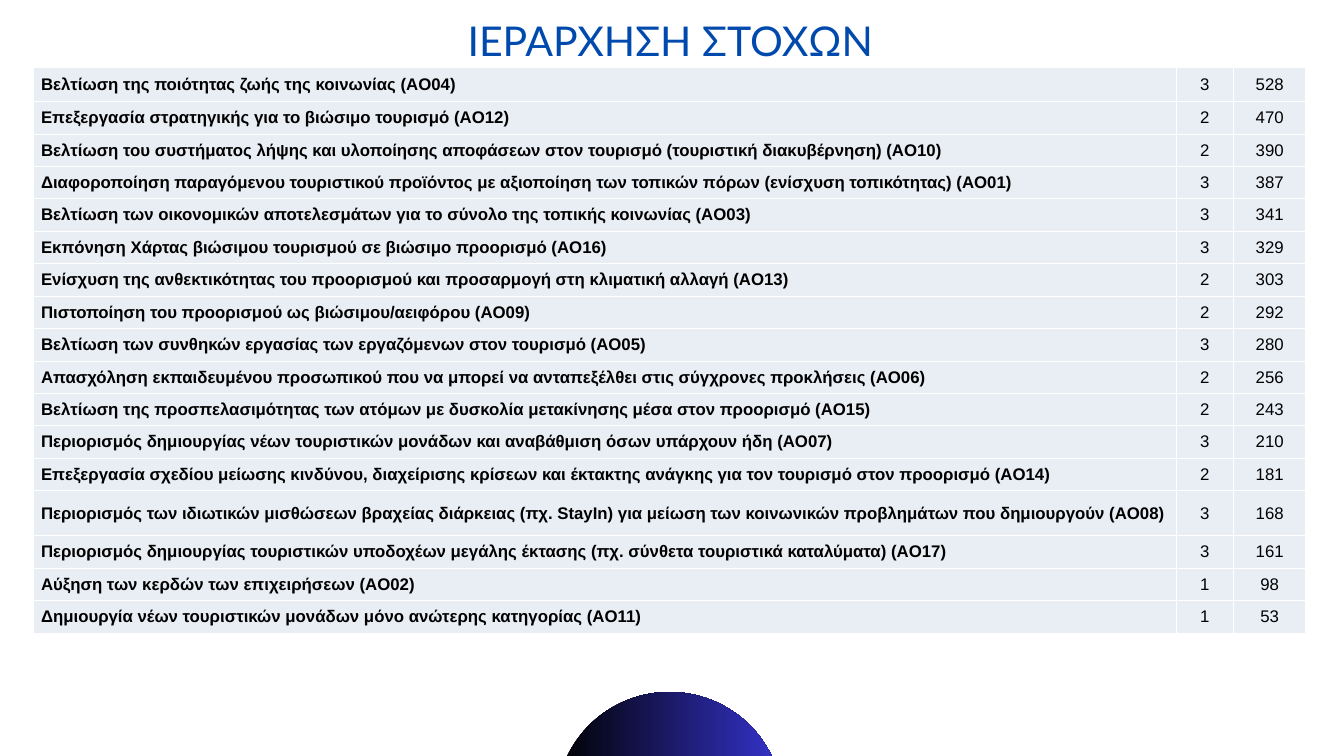
import dataclasses

import pptx
import pptx.dml.color
import pptx.enum.shapes
import pptx.enum.text
import pptx.oxml
import pptx.oxml.ns
import pptx.util
from pptx.util import Cm, Pt

RGB = pptx.dml.color.RGBColor.from_string
ALIGN = pptx.enum.text.PP_ALIGN


@dataclasses.dataclass(frozen=True)
class Theme:
    title_color: str = "004AAD"
    text_color: str = "000000"
    row_color: str = "E9EDF4"
    border_color: str = "FFFFFF"
    circle_colors: tuple = ("000000", "3533CD")
    title_font: str = "Lato"
    table_font: str = "Arial"
    title_size: int = 44
    table_size: int = 18
    border_width: int = 1


THEME = Theme()

GOALS = [
    ("Βελτίωση της ποιότητας ζωής της κοινωνίας (AO04)", 3, 528),
    ("Επεξεργασία στρατηγικής για το βιώσιμο τουρισμό (AO12)", 2, 470),
    ("Βελτίωση του συστήματος λήψης και υλοποίησης αποφάσεων στον τουρισμό (τουριστική διακυβέρνηση) (AO10)", 2, 390),
    ("Διαφοροποίηση παραγόμενου τουριστικού προϊόντος με αξιοποίηση των τοπικών πόρων (ενίσχυση τοπικότητας) (AO01)", 3, 387),
    ("Βελτίωση των οικονομικών αποτελεσμάτων για το σύνολο της τοπικής κοινωνίας (AO03)", 3, 341),
    ("Εκπόνηση Χάρτας βιώσιμου τουρισμού σε βιώσιμο προορισμό (AO16)", 3, 329),
    ("Ενίσχυση της ανθεκτικότητας του προορισμού και προσαρμογή στη κλιματική αλλαγή (AO13)", 2, 303),
    ("Πιστοποίηση του προορισμού ως βιώσιμου/αειφόρου (AO09)", 2, 292),
    ("Βελτίωση των συνθηκών εργασίας των εργαζόμενων στον τουρισμό (AO05)", 3, 280),
    ("Απασχόληση εκπαιδευμένου προσωπικού που να μπορεί να ανταπεξέλθει στις σύγχρονες προκλήσεις (AO06)", 2, 256),
    ("Βελτίωση της προσπελασιμότητας των ατόμων με δυσκολία μετακίνησης μέσα στον προορισμό (AO15)", 2, 243),
    ("Περιορισμός δημιουργίας νέων τουριστικών μονάδων και αναβάθμιση όσων υπάρχουν ήδη (AO07)", 3, 210),
    ("Επεξεργασία σχεδίου μείωσης κινδύνου, διαχείρισης κρίσεων και έκτακτης ανάγκης για τον τουρισμό στον προορισμό (AO14)", 2, 181),
    ("Περιορισμός των ιδιωτικών μισθώσεων βραχείας διάρκειας (πχ. StayIn) για μείωση των κοινωνικών προβλημάτων που δημιουργούν (AO08)", 3, 168),
    ("Περιορισμός δημιουργίας τουριστικών υποδοχέων μεγάλης έκτασης (πχ. σύνθετα τουριστικά καταλύματα) (AO17)", 3, 161),
    ("Αύξηση των κερδών των επιχειρήσεων (AO02)", 1, 98),
    ("Δημιουργία νέων τουριστικών μονάδων μόνο ανώτερης κατηγορίας (AO11)", 1, 53),
]

COLUMN_WIDTHS = (43.2, 2.18, 2.72)
TABLE_HEIGHT = 21.39
SPECIAL_ROWS = {0: 1.3, 13: 1.7}
GOAL_INDENT = 0.3


def apply(target, formats):
    for name, value in formats.items():
        setattr(target, name, value)


def write(paragraph, text, align, color, **formats):
    paragraph.text = text
    paragraph.alignment = align
    font = paragraph.runs[0].font
    apply(font, formats)
    font.color.rgb = RGB(color)


def add_borders(cell):
    properties = cell._tc.get_or_add_tcPr()
    for position, side in enumerate(("lnL", "lnR", "lnT", "lnB")):
        border = pptx.oxml.parse_xml(
            f'<a:{side} {pptx.oxml.ns.nsdecls("a")} w="{Pt(THEME.border_width)}">'
            f'<a:solidFill><a:srgbClr val="{THEME.border_color}"/></a:solidFill></a:{side}>'
        )
        properties.insert(position, border)


def fill_cell(cell, content, is_goal):
    apply(cell, {
        "margin_left": 0, "margin_right": 0, "margin_top": 0, "margin_bottom": 0,
        "vertical_anchor": pptx.enum.text.MSO_ANCHOR.MIDDLE,
    })
    cell.fill.solid()
    cell.fill.fore_color.rgb = RGB(THEME.row_color)
    add_borders(cell)
    paragraph = cell.text_frame.paragraphs[0]
    write(paragraph, str(content), ALIGN.LEFT if is_goal else ALIGN.CENTER, THEME.text_color,
          name=THEME.table_font, size=Pt(THEME.table_size), bold=is_goal)
    if is_goal:
        paragraph._p.get_or_add_pPr().set("marL", str(Cm(GOAL_INDENT)))


def add_ranking(slide):
    ranking = slide.shapes.add_table(
        len(GOALS), len(COLUMN_WIDTHS), Cm(1.25), Cm(2.54),
        Cm(sum(COLUMN_WIDTHS)), Cm(TABLE_HEIGHT),
    ).table
    apply(ranking, {"first_row": False, "horz_banding": False})
    for column, width in zip(ranking.columns, COLUMN_WIDTHS):
        column.width = Cm(width)
    regular = (TABLE_HEIGHT - sum(SPECIAL_ROWS.values())) / (len(GOALS) - len(SPECIAL_ROWS))
    for index, goal in enumerate(GOALS):
        ranking.rows[index].height = Cm(SPECIAL_ROWS.get(index, regular))
        for column, content in enumerate(goal):
            fill_cell(ranking.cell(index, column), content, column == 0)


def add_title(slide, text):
    title = slide.shapes.add_textbox(Cm(1.63), Cm(0.46), Cm(47.42), Cm(2.54)).text_frame
    title.word_wrap = True
    write(title.paragraphs[0], text, ALIGN.CENTER, THEME.title_color,
          name=THEME.title_font, size=Pt(THEME.title_size))


def add_circle(slide, left, top, diameter):
    circle = slide.shapes.add_shape(
        pptx.enum.shapes.MSO_SHAPE.OVAL, Cm(left), Cm(top), Cm(diameter), Cm(diameter))
    circle.shadow.inherit = False
    circle.line.fill.background()
    circle.fill.gradient()
    circle.fill.gradient_angle = 0
    for stop, color in zip(circle.fill.gradient_stops, THEME.circle_colors):
        stop.color.rgb = RGB(color)


def main():
    presentation = pptx.Presentation()
    apply(presentation, {"slide_width": Cm(50.8), "slide_height": Cm(28.58)})
    slide = presentation.slides.add_slide(presentation.slide_layouts[6])
    add_ranking(slide)
    add_title(slide, "ΙΕΡΑΡΧΗΣΗ ΣΤΟΧΩΝ")
    add_circle(slide, 21.01, 26.16, 8.59)
    presentation.save("out.pptx")


if __name__ == "__main__":
    main()
